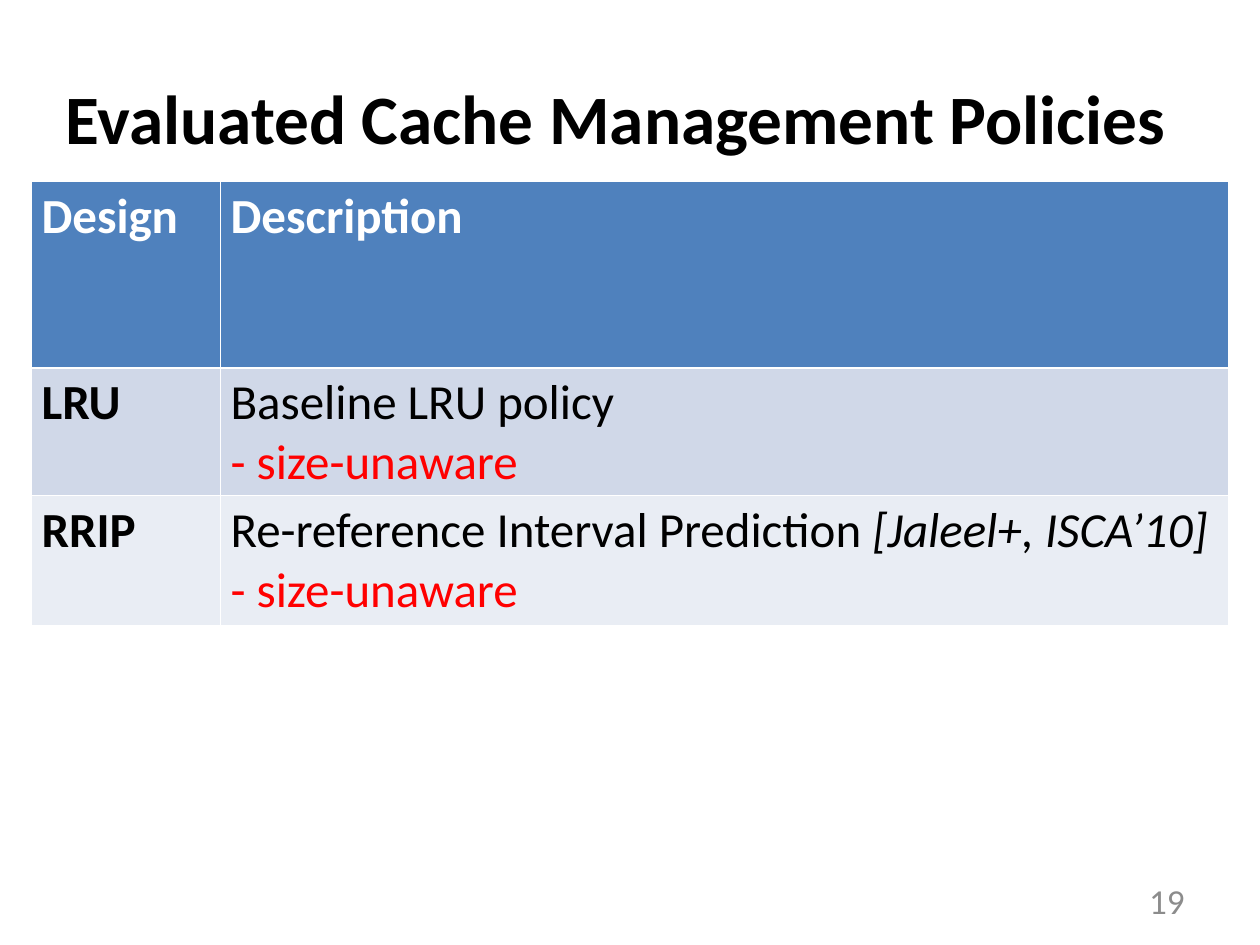
from pptx import Presentation
from pptx.dml.color import RGBColor
from pptx.enum.text import MSO_ANCHOR, MSO_AUTO_SIZE, PP_ALIGN
from pptx.util import Pt

PX = 9144  # EMU per px, 100 px to the inch
BLACK = RGBColor(0x00, 0x00, 0x00)
WHITE = RGBColor(0xFF, 0xFF, 0xFF)
RED = RGBColor(0xFF, 0x00, 0x00)
GRAY = RGBColor(0x8C, 0x8C, 0x8C)
HEADER_BLUE = RGBColor(0x4F, 0x81, 0xBD)
BAND_DARK = RGBColor(0xD0, 0xD8, 0xE8)
BAND_LIGHT = RGBColor(0xE9, 0xED, 0xF4)


def add_run(paragraph, text, size, color, **formats):
    run = paragraph.add_run()
    run.text = text
    run.font.color.rgb = color
    values = {"name": "Calibri", "size": Pt(size), "bold": False, "italic": False}
    for attribute, value in (values | formats).items():
        setattr(run.font, attribute, value)


prs = Presentation()
prs.slide_width, prs.slide_height = 1000 * PX, 750 * PX
slide = prs.slides.add_slide(prs.slide_layouts[5])

title = slide.shapes.title
title.left, title.top, title.width, title.height = 42 * PX, 30 * PX, 908 * PX, 125 * PX
title.text_frame.auto_size = MSO_AUTO_SIZE.NONE
title.text_frame.vertical_anchor = MSO_ANCHOR.MIDDLE
heading = title.text_frame.paragraphs[0]
heading.alignment = PP_ALIGN.LEFT
add_run(heading, "Evaluated Cache Management Policies", 39.6, BLACK, bold=True)

page_number = slide.shapes.add_textbox(717 * PX, 695 * PX, 233 * PX, 40 * PX).text_frame
page_number.word_wrap = True
page_number.vertical_anchor = MSO_ANCHOR.MIDDLE
page_number.paragraphs[0].alignment = PP_ALIGN.RIGHT
add_run(page_number.paragraphs[0], "19", 20, GRAY)

BOLD = {"bold": True}
ITALIC = {"italic": True}
# Each row: height, fill, cells; a cell is a list of paragraphs, each a list of runs
policy_rows = [
    (148, HEADER_BLUE, [[[("Design", WHITE, BOLD)]],
                        [[("Description", WHITE, BOLD)]]]),
    (100, BAND_DARK, [[[("LRU", BLACK, BOLD)]],
                      [[("Baseline LRU policy", BLACK, {})],
                       [("- size-unaware", RED, {})]]]),
    (103, BAND_LIGHT, [[[("RRIP", BLACK, BOLD)]],
                       [[("Re-reference Interval Prediction ", BLACK, {}),
                         ("[Jaleel+, ISCA’10] ", BLACK, ITALIC),
                         ("- size-unaware", RED, {})]]]),
]
table_height = sum(height for height, _, _ in policy_rows)
policies = slide.shapes.add_table(
    len(policy_rows), 2, 25 * PX, 144 * PX, 950 * PX, table_height * PX).table
for column, width in zip(policies.columns, (150, 800)):
    column.width = width * PX

for row, (height, fill, contents) in zip(policies.rows, policy_rows):
    row.height = height * PX
    for cell, paragraphs in zip(row.cells, contents):
        cell.fill.solid()
        cell.fill.fore_color.rgb = fill
        cell.margin_left = cell.margin_right = 8 * PX
        cell.margin_top = cell.margin_bottom = 4 * PX
        for index, runs in enumerate(paragraphs):
            frame = cell.text_frame
            paragraph = frame.add_paragraph() if index else frame.paragraphs[0]
            for text, color, formats in runs:
                add_run(paragraph, text, 28, color, **formats)

prs.save("out.pptx")
